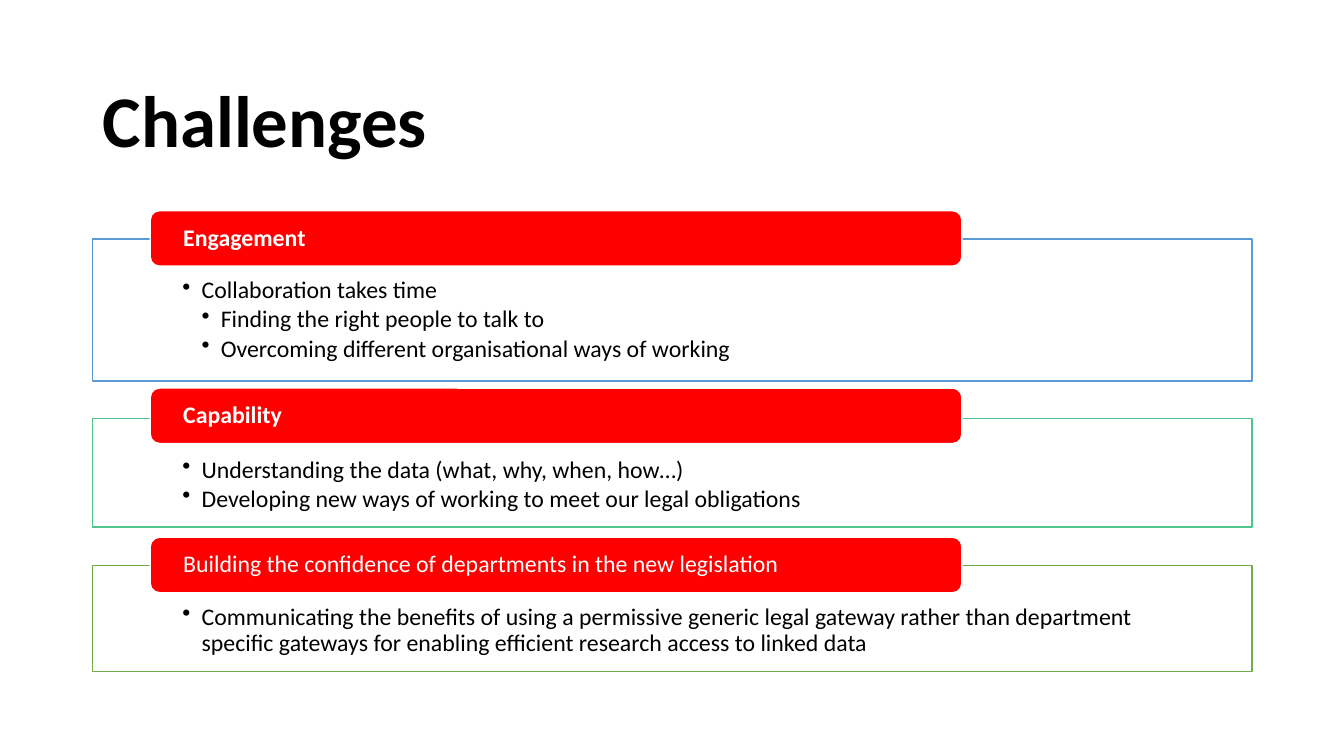
from lxml import etree
from pptx import Presentation, util as u
from pptx.dml.color import RGBColor
from pptx.enum import shapes, text
from pptx.oxml.ns import qn

COLORS = {
    "ink": "000000", "paper": "FFFFFF", "tab": "FF0000",
    "engagement": "5B9BD5", "capability": "4DC58D", "confidence": "70AD47",
}
WIDTH, HEIGHT = 13.33, 7.5
LEFT, CONTENT_WIDTH = 0.92, 11.5
TAB_INDENT, TAB_SHARE, TAB_HEIGHT = 0.57, 0.7, 0.55
BULLET_STEP = 0.19

CHALLENGES = [
    ("Engagement", True, "engagement", 2.37, 1.41, 0.28,
     [(1, "Collaboration takes time"),
      (2, "Finding the right people to talk to"),
      (2, "Overcoming different organisational ways of working")]),
    ("Capability", True, "capability", 4.15, 1.08, 0.3,
     [(1, "Understanding the data (what, why, when, how…)"),
      (1, "Developing new ways of working to meet our legal obligations")]),
    ("Building the confidence of departments in the new legislation", False,
     "confidence", 5.61, 1.05, 0.28,
     [(1, "Communicating the benefits of using a permissive generic legal "
          "gateway rather than department specific gateways for enabling "
          "efficient research access to linked data")]),
]


def rgb(name):
    return RGBColor.from_string(COLORS[name])


def write(paragraph, words, size=17, color="ink", bold=False, level=0, after=0):
    paragraph.alignment = text.PP_ALIGN.LEFT
    paragraph.line_spacing = 0.9
    paragraph.space_after = u.Pt(after)
    run = paragraph.add_run()
    run.text = words
    run.font.name = "Calibri"
    run.font.size = u.Pt(size)
    run.font.bold = bold
    run.font.color.rgb = rgb(color)
    if level:
        paragraph.level = level
        props = paragraph._p.get_or_add_pPr()
        props.set("marL", str(u.Inches(BULLET_STEP * level)))
        props.set("indent", str(-u.Inches(BULLET_STEP)))
        etree.SubElement(props, qn("a:buChar")).set("char", "•")


def add_panel(slide, kind, box, fill, line, insets, anchor):
    panel = slide.shapes.add_shape(kind, *map(u.Inches, box))
    panel.shadow.inherit = False
    panel.fill.solid()
    panel.fill.fore_color.rgb = rgb(fill)
    panel.line.color.rgb = rgb(line)
    panel.line.width = u.Pt(1)
    frame = panel.text_frame
    frame.word_wrap = True
    frame.vertical_anchor = anchor
    (frame.margin_left, frame.margin_top,
     frame.margin_right, frame.margin_bottom) = map(u.Inches, insets)
    return panel


def add_title(slide, box):
    title = slide.shapes.title
    title.left, title.top, title.width, title.height = map(u.Inches, box)
    title.text_frame.vertical_anchor = text.MSO_ANCHOR.MIDDLE
    write(title.text_frame.paragraphs[0], "Challenges", size=52, bold=True)


def add_challenge(slide, box, heading, bold, outline, rise, points):
    left, top, width, height = box
    details = add_panel(slide, shapes.MSO_SHAPE.RECTANGLE, box, "paper", outline,
                        (0.89, 0.39, 0.89, 0.13), text.MSO_ANCHOR.TOP)
    fill_color = details.fill._xPr.find(qn("a:solidFill"))[0]
    etree.SubElement(fill_color, qn("a:alpha")).set("val", "90000")
    frame = details.text_frame
    for index, (level, point) in enumerate(points):
        paragraph = frame.add_paragraph() if index else frame.paragraphs[0]
        write(paragraph, point, level=level, after=2.5)

    tab_box = (left + TAB_INDENT, top - rise, width * TAB_SHARE, TAB_HEIGHT)
    tab = add_panel(slide, shapes.MSO_SHAPE.ROUNDED_RECTANGLE, tab_box, "tab",
                    "paper", (0.3, 0, 0.3, 0), text.MSO_ANCHOR.MIDDLE)
    write(tab.text_frame.paragraphs[0], heading, color="paper", bold=bold)


def main():
    deck = Presentation()
    deck.slide_width, deck.slide_height = u.Inches(WIDTH), u.Inches(HEIGHT)
    slide = deck.slides.add_slide(deck.slide_layouts[5])
    add_title(slide, (LEFT, 0.61, CONTENT_WIDTH, 1.24))
    for heading, bold, outline, top, height, rise, points in CHALLENGES:
        add_challenge(slide, (LEFT, top, CONTENT_WIDTH, height),
                      heading, bold, outline, rise, points)
    deck.save("out.pptx")


if __name__ == "__main__":
    main()
